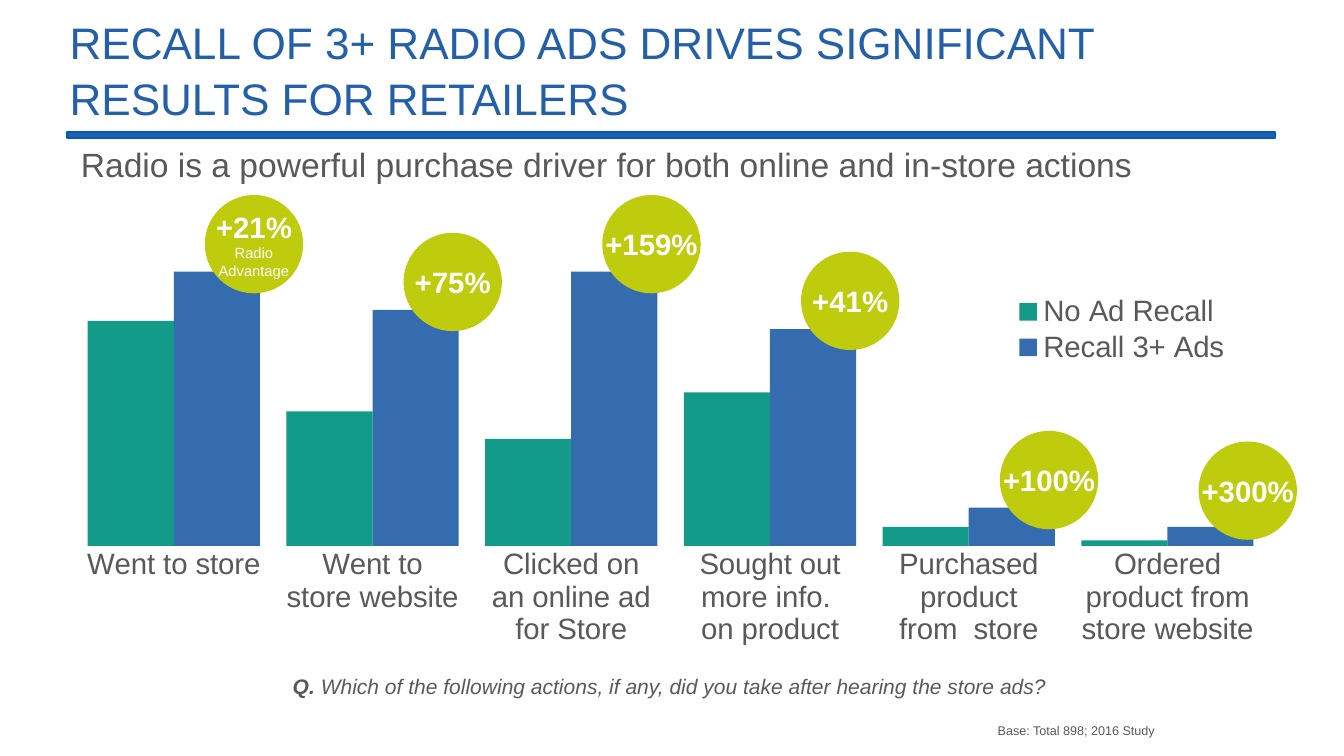
from lxml import etree
from pptx import Presentation
from pptx import util as u
from pptx.chart.data import CategoryChartData
from pptx.dml.color import RGBColor
from pptx.enum import chart as ch, shapes, text
from pptx.oxml import parse_xml
from pptx.oxml.ns import nsdecls, qn

BLUE = RGBColor(0x24, 0x60, 0xAA)
RULE = RGBColor(0x00, 0x5C, 0xB9)
TEAL = RGBColor(0x00, 0x92, 0x80)
LIME = RGBColor(0xBE, 0xCC, 0x0D)
GRAY = RGBColor(0x59, 0x59, 0x59)
WHITE = RGBColor(0xFF, 0xFF, 0xFF)
FONT = "Arial"

TITLE = "RECALL OF 3+ RADIO ADS DRIVES SIGNIFICANT RESULTS FOR RETAILERS"
SUBTITLE = "Radio is a powerful purchase driver for both online and in-store actions"
QUESTION = "Which of the following actions, if any, did you take after hearing the store ads?"
BASE = "Base: Total 898; 2016 Study"

ACTIONS = [
    ("Went to store", 82, 100),
    ("Went to\nstore website", 49, 86),
    ("Clicked on\nan online ad\nfor Store", 39, 100),
    ("Sought out\nmore info. \non product", 56, 79),
    ("Purchased product\nfrom  store", 7, 14),
    ("Ordered product from store website", 2, 7),
]
SERIES = [("No Ad Recall", TEAL), ("Recall 3+ Ads", BLUE)]
BADGES = [
    (2.58, ["+21%", "Radio", "Advantage"]),
    (3.08, ["+75%"]),
    (2.58, ["+159%"]),
    (3.33, ["+41%"]),
    (5.70, ["+100%"]),
    (5.84, ["+300%"]),
]

CHART = (0.84, 3.18, 16, 5.76)
PLOT = (0.009, 0.04, 0.986, 0.662)
LEGEND = (0.77, 0.12, 0.21, 0.17)
BADGE_SIZE = 1.3
BADGE_LEFT = 2.71
COLUMN = CHART[2] * PLOT[2] / len(ACTIONS)


def inches(box):
    return [u.Inches(v) for v in box]


def set_font(font, size, color, bold=False):
    font.name, font.size, font.bold = FONT, u.Pt(size), bold
    font.color.rgb = color


def add_text(s, box, runs, size, color=GRAY, align=text.PP_ALIGN.LEFT,
             anchor=text.MSO_ANCHOR.TOP, italic=False, spacing=None):
    tf = s.shapes.add_textbox(*inches(box)).text_frame
    tf.word_wrap = True
    tf.vertical_anchor = anchor
    tf.margin_left = tf.margin_right = u.Inches(0.18)
    tf.margin_top = tf.margin_bottom = u.Inches(0.09)
    p = tf.paragraphs[0]
    p.alignment, p.line_spacing = align, spacing
    set_font(p.font, size, color)
    p.font.italic = italic
    for words, bold in runs:
        r = p.add_run()
        r.text = words
        if bold:
            r.font.bold = True


def manual_layout(box, inner=False):
    target = '<c:layoutTarget val="inner"/>' if inner else ""
    modes = '<c:xMode val="edge"/><c:yMode val="edge"/>'
    sizes = "".join(f'<c:{k} val="{v}"/>' for k, v in zip("xywh", box))
    return parse_xml(f'<c:layout {nsdecls("c")}><c:manualLayout>{target}{modes}{sizes}'
                     '</c:manualLayout></c:layout>')


def place(parent, layout, before):
    for old in parent.findall(qn("c:layout")):
        parent.remove(old)
    parent.find(qn(before)).addprevious(layout)


def add_recall_chart(s):
    data = CategoryChartData(number_format="General")
    data.categories = [a[0] for a in ACTIONS]
    for i, (name, _) in enumerate(SERIES, 1):
        data.add_series(name, [a[i] for a in ACTIONS])
    chart = s.shapes.add_chart(ch.XL_CHART_TYPE.COLUMN_CLUSTERED, *inches(CHART), data).chart
    set_font(chart.font, 24, GRAY)
    chart.has_title = False

    plot = chart.plots[0]
    plot.gap_width, plot.overlap, plot.vary_by_categories = 31, 0, False
    for series, (_, color) in zip(plot.series, SERIES):
        fill = series.format.fill
        fill.solid()
        fill.fore_color.rgb = color
        clr = series.format._element.spPr.find(".//" + qn("a:srgbClr")) if hasattr(
            series.format, "_element") else series._element.find(".//" + qn("a:srgbClr"))
        etree.SubElement(clr, qn("a:alpha")).set("val", "92000")

    cat, val = chart.category_axis, chart.value_axis
    cat.major_tick_mark = ch.XL_TICK_MARK.NONE
    cat.format.line.fill.background()
    set_font(cat.tick_labels.font, 28, GRAY)
    val.visible = val.has_major_gridlines = False
    val.minimum_scale, val.maximum_scale = 0, 105

    chart.has_legend = True
    legend = chart.legend
    legend.position = ch.XL_LEGEND_POSITION.RIGHT
    legend.include_in_layout = False
    set_font(legend.font, 28, GRAY)
    place(legend._element, manual_layout(LEGEND), "c:overlay")
    place(plot._element.getparent(), manual_layout(PLOT, True), "c:barChart")


def add_badge(s, left, top, lines):
    sp = s.shapes.add_shape(shapes.MSO_SHAPE.OVAL, *inches((left, top, BADGE_SIZE, BADGE_SIZE)))
    sp.shadow.inherit = False
    sp.fill.solid()
    sp.fill.fore_color.rgb = LIME
    sp.line.fill.background()
    tf = sp.text_frame
    tf.word_wrap = False
    tf.vertical_anchor = text.MSO_ANCHOR.MIDDLE
    tf.margin_left = tf.margin_right = tf.margin_top = tf.margin_bottom = 0
    for i, line in enumerate(lines):
        p = tf.add_paragraph() if i else tf.paragraphs[0]
        p.text = line
        p.alignment = text.PP_ALIGN.CENTER
        set_font(p.font, 14 if i else 28, WHITE, bold=i == 0)


def main():
    prs = Presentation()
    prs.slide_width, prs.slide_height = u.Inches(17.78), u.Inches(10)
    s = prs.slides.add_slide(prs.slide_layouts[6])

    sp = s.shapes.add_shape(shapes.MSO_SHAPE.RECTANGLE, *inches((0.89, 1.75, 15.98, 0.08)))
    sp.shadow.inherit = False
    sp.fill.solid()
    sp.fill.fore_color.rgb = BLUE
    sp.line.color.rgb, sp.line.width = RULE, u.Pt(2)

    add_recall_chart(s)
    add_text(s, (3.46, 8.82, 10.8, 0.51), [("Q. ", True), (QUESTION, False)], 20,
             align=text.PP_ALIGN.CENTER, italic=True)
    add_text(s, (11.76, 9.47, 3.7, 0.45), [(BASE, False)], 12, align=text.PP_ALIGN.RIGHT)
    for i, (top, lines) in enumerate(BADGES):
        add_badge(s, BADGE_LEFT + i * COLUMN, top, lines)
    middle = text.MSO_ANCHOR.MIDDLE
    add_text(s, (0.74, 0.48, 16.58, 0.85), [(TITLE, False)], 42, BLUE, anchor=middle, spacing=1.05)
    add_text(s, (0.89, 1.75, 14.96, 0.85), [(SUBTITLE, False)], 32, anchor=middle)
    prs.save("out.pptx")


if __name__ == "__main__":
    main()
